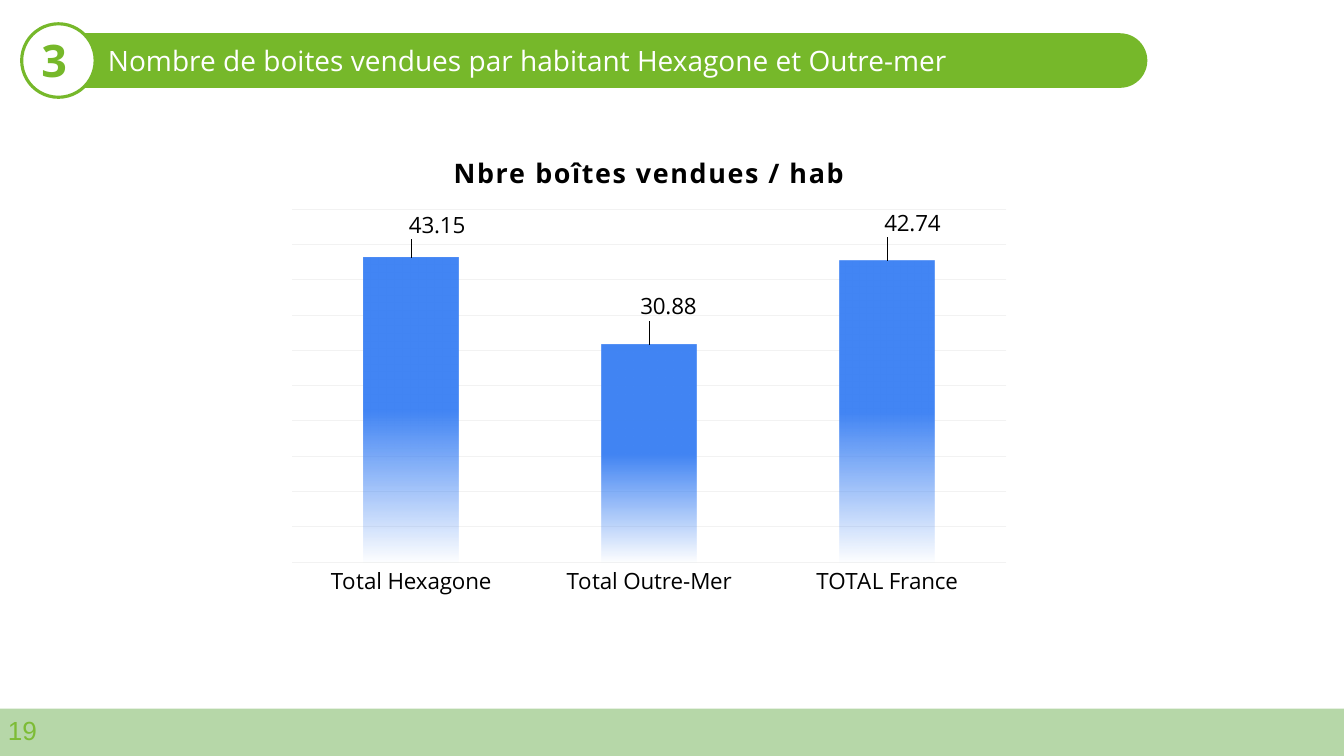
from dataclasses import dataclass

from lxml import etree
from pptx import Presentation
from pptx.chart.data import CategoryChartData
from pptx.dml.color import RGBColor
from pptx.enum.chart import XL_CHART_TYPE, XL_LABEL_POSITION, XL_TICK_LABEL_POSITION, XL_TICK_MARK
from pptx.enum.shapes import MSO_SHAPE
from pptx.enum.text import MSO_ANCHOR
from pptx.oxml import parse_xml
from pptx.oxml.ns import nsdecls, qn
from pptx.util import Pt


@dataclass(frozen=True)
class Theme:
    green: RGBColor = RGBColor(0x76, 0xB8, 0x2A)
    footer: RGBColor = RGBColor(0xB6, 0xD7, 0xA8)
    page_number: RGBColor = RGBColor(0x7D, 0xBC, 0x35)
    white: RGBColor = RGBColor(0xFF, 0xFF, 0xFF)
    black: RGBColor = RGBColor(0, 0, 0)
    bar: RGBColor = RGBColor(0x42, 0x85, 0xF4)
    grid: RGBColor = RGBColor(0xF2, 0xF2, 0xF2)
    font: str = "Open Sans"
    number_font: str = "Arial"
    section_size: float = 32
    heading_size: float = 20
    chart_title_size: float = 19.2
    page_size: float = 18.7
    label_size: float = 16


THEME = Theme()
SERIES_NAME = "Nbre boîtes vendues / hab"
# Category, value, and horizontal and vertical label shift as parts of the chart size
SALES = [
    ("Total Hexagone", 43.15, 0.035, -0.03),
    ("Total Outre-Mer", 30.88, 0.026, -0.04),
    ("TOTAL France", 42.74, 0.034, -0.04),
]


def style_font(font, size, color, name=THEME.font, bold=False):
    font.size = Pt(size)
    font.name = name
    font.bold = bold
    font.color.rgb = color


def add_panel(slide, preset, box, fill, line=None, line_width=0):
    shape = slide.shapes.add_shape(preset, *map(Pt, box))
    shape.shadow.inherit = False
    shape.fill.solid()
    shape.fill.fore_color.rgb = fill
    if line is None:
        shape.line.fill.background()
    else:
        shape.line.color.rgb = line
        shape.line.width = Pt(line_width)
    return shape


def add_label(slide, box, text, size, color, name=THEME.font, bold=False,
              margins=(9.4, 9.4), anchor=MSO_ANCHOR.TOP):
    frame = slide.shapes.add_textbox(*map(Pt, box)).text_frame
    frame.word_wrap = True
    frame.vertical_anchor = anchor
    frame.margin_left = frame.margin_right = Pt(margins[0])
    frame.margin_top = frame.margin_bottom = Pt(margins[1])
    run = frame.paragraphs[0].add_run()
    run.text = text
    style_font(run.font, size, color, name, bold)


def layout_xml(x, y, width=None, height=None):
    """Return a chart layout; with a size it fixes the inner plot area."""
    parts = []
    if width is not None:
        parts += ['<c:layoutTarget val="inner"/>', '<c:xMode val="edge"/>', '<c:yMode val="edge"/>']
    parts += [f'<c:x val="{x}"/>', f'<c:y val="{y}"/>']
    if width is not None:
        parts += [f'<c:w val="{width}"/>', f'<c:h val="{height}"/>']
    return parse_xml(f'<c:layout {nsdecls("c")}><c:manualLayout>{"".join(parts)}'
                     '</c:manualLayout></c:layout>')


def style_title(chart):
    paragraph = chart.chart_title.text_frame.paragraphs[0]
    run = paragraph.add_run()
    run.text = SERIES_NAME
    style_font(run.font, THEME.chart_title_size, THEME.black, bold=True)
    run.font._element.set("spc", "100")


def style_axes(chart):
    category_axis = chart.category_axis
    category_axis.major_tick_mark = XL_TICK_MARK.NONE
    category_axis.format.line.fill.background()
    style_font(category_axis.tick_labels.font, THEME.label_size, THEME.black)
    value_axis = chart.value_axis
    value_axis.minimum_scale, value_axis.maximum_scale = 0, 50
    value_axis.major_unit = 5
    value_axis.has_major_gridlines = True
    value_axis.major_gridlines.format.line.color.rgb = THEME.grid
    value_axis.major_gridlines.format.line.width = Pt(0.75)
    value_axis.tick_labels.number_format = "0.00"
    value_axis.tick_labels.number_format_is_linked = False
    value_axis.tick_label_position = XL_TICK_LABEL_POSITION.NONE
    value_axis.visible = False


def fade_bars(series):
    """Fill the bars with a gradient that turns transparent at the foot."""
    fill = series.format.fill
    fill.gradient()
    fill.gradient_angle = 270
    for stop, position in zip(fill.gradient_stops, (0.5, 1)):
        stop.position = position
        stop.color.rgb = THEME.bar
    last_color = series._element.findall(".//" + qn("a:srgbClr"))[-1]
    etree.SubElement(last_color, qn("a:alpha")).set("val", "0")


def style_labels(series):
    labels = series.data_labels
    labels.show_value = True
    labels.number_format = "0.00"
    labels.number_format_is_linked = False
    labels.position = XL_LABEL_POSITION.OUTSIDE_END
    style_font(labels.font, THEME.label_size, THEME.black)
    for index, (_, _, shift_x, shift_y) in enumerate(SALES):
        label = series.points[index].data_label
        style_font(label.font, THEME.label_size, THEME.black)
        label.position = XL_LABEL_POSITION.OUTSIDE_END
    for element, (_, _, shift_x, shift_y) in zip(series._element.iter(qn("c:dLbl")), SALES):
        element.insert(1, layout_xml(shift_x, shift_y))
        element.insert(2, parse_xml(
            f'<c:numFmt {nsdecls("c")} formatCode="0.00" sourceLinked="0"/>'))


def add_sales_chart(slide, box):
    data = CategoryChartData(number_format="0.00")
    data.categories = [sale[0] for sale in SALES]
    data.add_series(SERIES_NAME, [sale[1] for sale in SALES])
    chart = slide.shapes.add_chart(XL_CHART_TYPE.COLUMN_CLUSTERED, *map(Pt, box), data).chart
    chart.has_legend = False
    style_font(chart.font, THEME.label_size, THEME.black)
    style_title(chart)
    style_axes(chart)
    plot = chart.plots[0]
    plot.gap_width = 150
    plot.vary_by_categories = False
    fade_bars(plot.series[0])
    style_labels(plot.series[0])
    plot_area = chart._chartSpace.find(".//" + qn("c:plotArea"))
    for layout in plot_area.findall(qn("c:layout")):
        plot_area.remove(layout)
    plot_area.insert(0, layout_xml(0.02, 0.165, 0.96, 0.743))


def add_header(slide):
    banner = add_panel(slide, MSO_SHAPE.ROUNDED_RECTANGLE, (28.8, 24.5, 790, 37.5),
                       THEME.green, THEME.green, 1.5)
    banner.adjustments[0] = 0.5
    add_panel(slide, MSO_SHAPE.OVAL, (15.5, 17, 52.5, 52.5), THEME.white, THEME.green, 2.25)
    add_label(slide, (20.2, 13.7, 58.3, 51), "3", THEME.section_size, THEME.green, bold=True)
    add_label(slide, (67.7, 24.5, 766, 37.5),
              "Nombre de boites vendues par habitant Hexagone et Outre-mer",
              THEME.heading_size, THEME.white, anchor=MSO_ANCHOR.MIDDLE)


def add_footer(slide):
    add_panel(slide, MSO_SHAPE.RECTANGLE, (0, 506.2, 960, 34), THEME.footer)
    add_label(slide, (-1.4, 506.9, 41, 31), "19", THEME.page_size, THEME.page_number,
              name=THEME.number_font, margins=(7.2, 3.6))


def main():
    presentation = Presentation()
    presentation.slide_width, presentation.slide_height = Pt(960), Pt(540)
    slide = presentation.slides.add_slide(presentation.slide_layouts[6])
    add_footer(slide)
    add_header(slide)
    add_sales_chart(slide, (198, 93.6, 531.4, 339.1))
    presentation.save("out.pptx")


if __name__ == "__main__":
    main()
